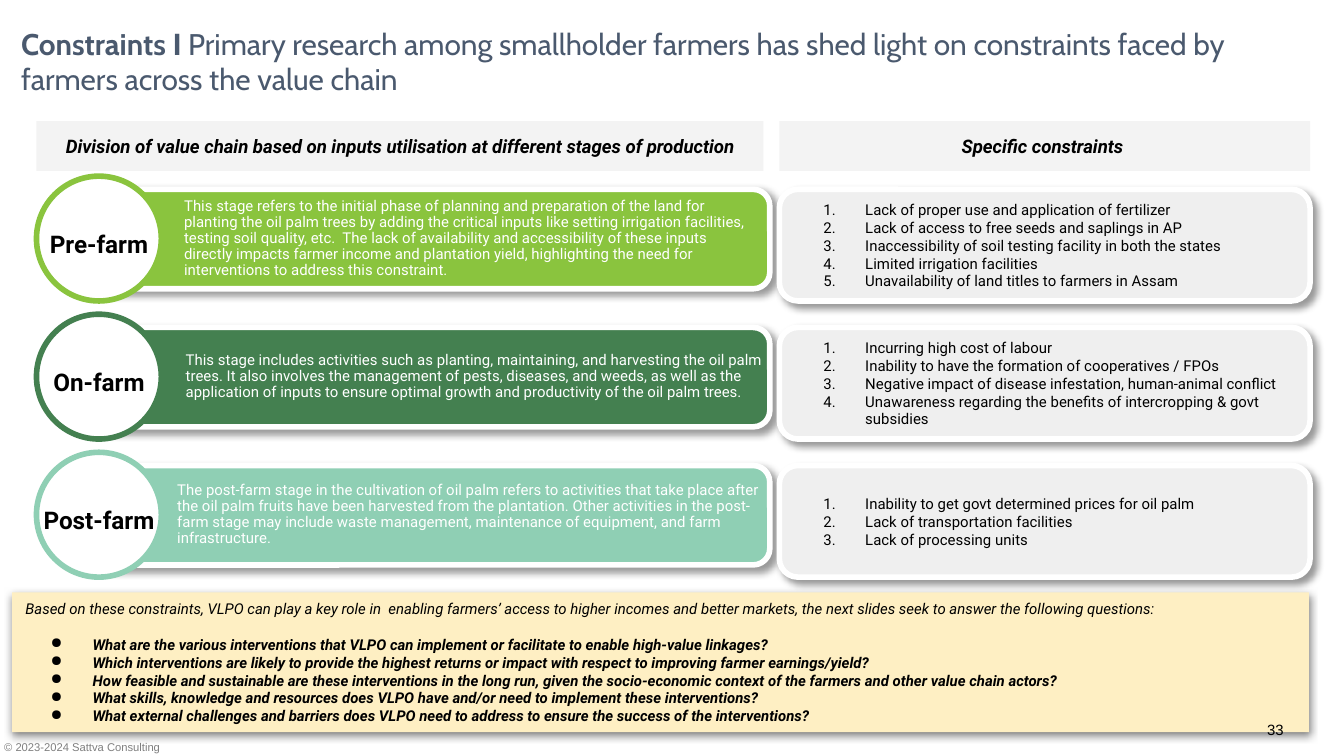
from lxml import etree
from pptx import Presentation
from pptx.dml.color import RGBColor
from pptx.enum.shapes import MSO_SHAPE
from pptx.enum.text import MSO_ANCHOR, PP_ALIGN
from pptx.oxml.ns import qn
from pptx.util import Cm, Pt

RECTANGLE = MSO_SHAPE.RECTANGLE
ROUNDED = MSO_SHAPE.ROUNDED_RECTANGLE
OVAL = MSO_SHAPE.OVAL
TOP, MIDDLE = MSO_ANCHOR.TOP, MSO_ANCHOR.MIDDLE
LEFT, CENTER, RIGHT, JUSTIFY = PP_ALIGN.LEFT, PP_ALIGN.CENTER, PP_ALIGN.RIGHT, PP_ALIGN.JUSTIFY

BLACK = RGBColor(0x00, 0x00, 0x00)
WHITE = RGBColor(0xFF, 0xFF, 0xFF)
SLATE = RGBColor(0x4A, 0x59, 0x6E)
GREY = RGBColor(0x7F, 0x7F, 0x7F)
HEADER_GREY = RGBColor(0xF3, 0xF3, 0xF3)
CARD_GREY = RGBColor(0xEF, 0xEF, 0xEF)
CREAM = RGBColor(0xFE, 0xEF, 0xC3)
LIME = RGBColor(0x8A, 0xC4, 0x3E)
FOREST = RGBColor(0x44, 0x80, 0x50)
MINT = RGBColor(0x8F, 0xCF, 0xB4)

STAGE_TOP, STAGE_PITCH = 3.58, 2.61
CONSTRAINT_LEFT, CONSTRAINT_WIDTH = 14.73, 10.03
CARD_SHADOW = (40, 4, 3, 45)
PANEL_SHADOW = (50, 4.5, 1.5, 90)

STAGES = [
    ("Pre-farm", LIME, 1.98, 12.42,
     "This stage refers to the initial phase of planning and preparation of the land for planting "
     "the oil palm trees by adding the critical inputs like setting irrigation facilities, testing "
     "soil quality, etc.  The lack of availability and accessibility of these inputs directly impacts "
     "farmer income and plantation yield, highlighting the need for interventions to address this "
     "constraint.",
     ["Lack of proper use and application of fertilizer",
      "Lack of access to free seeds and saplings in AP",
      "Inaccessibility of soil testing facility in both the states",
      "Limited irrigation facilities",
      "Unavailability of land titles to farmers in Assam"]),
    ("On-farm", FOREST, 2.01, 12.55,
     "This stage includes activities such as planting, maintaining, and harvesting the oil palm trees. "
     "It also involves the management of pests, diseases, and weeds, as well as the application of "
     "inputs to ensure optimal growth and productivity of the oil palm trees.",
     ["Incurring high cost of labour",
      "Inability to have the formation of cooperatives / FPOs",
      "Negative impact of disease infestation, human-animal conflict",
      "Unawareness regarding the benefits of intercropping & govt subsidies"]),
    ("Post-farm", MINT, 1.85, 12.7,
     "The post-farm stage in the cultivation of oil palm refers to activities that take place after "
     "the oil palm fruits have been harvested from the plantation. Other activities in the post-farm "
     "stage may include waste management, maintenance of equipment, and farm infrastructure.",
     ["Inability to get govt determined prices for oil palm",
      "Lack of transportation facilities",
      "Lack of processing units"]),
]

INTRODUCTION = (
    "Based on these constraints, VLPO can play a key role in  enabling farmers’ access to higher "
    "incomes and better markets, the next slides seek to answer the following questions: ")
QUESTIONS = [
    "What are the various interventions that VLPO can implement or facilitate to enable high-value linkages?",
    "Which interventions are likely to provide the highest returns or impact with respect to improving "
    "farmer earnings/yield?",
    "How feasible and sustainable are these interventions in the long run, given the socio-economic "
    "context of the farmers and other value chain actors?",
    "What skills, knowledge and resources does VLPO have and/or need to implement these interventions?",
    "What external challenges and barriers does VLPO need to address to ensure the success of the "
    "interventions? ",
]


def add_shadow(shape, opacity, blur, distance, angle):
    """Give a shape an outer black shadow."""
    effects = shape._element.spPr.find(qn("a:effectLst"))
    shadow = etree.SubElement(
        effects, qn("a:outerShdw"), blurRad=str(Pt(blur)), dist=str(Pt(distance)),
        dir=str(angle * 60000), algn="bl", rotWithShape="0")
    color = etree.SubElement(shadow, qn("a:srgbClr"), val=str(BLACK))
    etree.SubElement(color, qn("a:alpha"), val=str(opacity * 1000))


def add_box(slide, kind, left, top, width, height, fill, line=None, shadow=None):
    """Add a filled preset shape with an optional outline and shadow."""
    shape = slide.shapes.add_shape(kind, Cm(left), Cm(top), Cm(width), Cm(height))
    shape.shadow.inherit = False
    shape.fill.solid()
    shape.fill.fore_color.rgb = fill
    if line is None:
        shape.line.fill.background()
    else:
        shape.line.color.rgb = line
        shape.line.width = Pt(3)
    if shadow:
        add_shadow(shape, *shadow)
    return shape


def set_frame(shape, margins=(0.25, 0.25, 0.25, 0.25), anchor=MIDDLE):
    """Prepare the text frame of a shape and return it."""
    frame = shape.text_frame
    frame.word_wrap = True
    frame.vertical_anchor = anchor
    frame.margin_left, frame.margin_top, frame.margin_right, frame.margin_bottom = map(Cm, margins)
    return frame


def style_paragraph(paragraph, size, color=BLACK, align=LEFT, name="Roboto", bold=False, italic=False):
    """Set alignment and font of a paragraph."""
    paragraph.alignment = align
    font = paragraph.font
    font.size, font.name, font.bold, font.italic = Pt(size), name, bold, italic
    font.color.rgb = color


def add_marker(paragraph, tag, **attributes):
    """Indent a paragraph and give it a black bullet or number."""
    properties = paragraph._p.get_or_add_pPr()
    properties.set("marL", str(Cm(1.27)))
    properties.set("indent", str(Cm(-0.79)))
    color = etree.SubElement(properties, qn("a:buClr"))
    etree.SubElement(color, qn("a:srgbClr"), val=str(BLACK))
    etree.SubElement(properties, qn(tag), **attributes)


def add_text(slide, text, left, top, width, height, margins, anchor, size, **style):
    """Add a text box with one paragraph and return the paragraph."""
    box = slide.shapes.add_textbox(Cm(left), Cm(top), Cm(width), Cm(height))
    paragraph = set_frame(box, margins, anchor).paragraphs[0]
    paragraph.text = text
    style_paragraph(paragraph, size, **style)
    return paragraph


def add_title(slide):
    """Add the title with its bold lead."""
    paragraph = add_text(slide, "", 0.15, 0.23, 24.51, 2.36, (0.25,) * 4, TOP, 16,
                         color=SLATE, name="Cabin")
    for text, name, bold in (
            ("Constraints ", "Cabin", True), ("I", "Roboto", True),
            (" Primary research among smallholder farmers has shed light on constraints faced by "
             "farmers across the value chain", "Cabin", False)):
        run = paragraph.add_run()
        run.text = text
        run.font.name, run.font.bold = name, bold


def add_header(slide, text, left, width):
    """Add a column header."""
    shape = add_box(slide, RECTANGLE, left, 2.29, width, 0.94, HEADER_GREY)
    paragraph = set_frame(shape).paragraphs[0]
    paragraph.text = text
    style_paragraph(paragraph, 10, align=CENTER, bold=True, italic=True)


def add_constraints(slide, top, constraints):
    """Add a card with a numbered list."""
    card = add_box(slide, ROUNDED, CONSTRAINT_LEFT, top, CONSTRAINT_WIDTH, 2.11,
                   CARD_GREY, WHITE, CARD_SHADOW)
    frame = set_frame(card)
    for index, text in enumerate(constraints):
        paragraph = frame.add_paragraph() if index else frame.paragraphs[0]
        paragraph.text = text
        add_marker(paragraph, "a:buAutoNum", type="arabicPeriod")
        style_paragraph(paragraph, 8)


def add_stage(slide, top, name, color, text_left, text_width, description, constraints):
    """Add one row: bar, description, named circle and constraints."""
    add_box(slide, ROUNDED, 1.85, top, 12.7, 1.88, color, WHITE, CARD_SHADOW)
    paragraph = add_text(slide, description, text_left, top + 0.08, text_width, 1.7,
                         (1.5, 0.1, 0.1, 0.1), MIDDLE, 8, color=WHITE)
    paragraph.line_spacing = 0.9
    add_box(slide, OVAL, 0.69, top - 0.25, 2.36, 2.36, WHITE, color)
    add_text(slide, name, 0.57, top + 0.41, 2.6, 1.22, (0, 0.25, 0, 0.25), MIDDLE, 13,
             align=CENTER, bold=True)
    add_constraints(slide, top, constraints)


def add_questions(slide):
    """Add the panel with the introduction and bulleted questions."""
    panel = add_box(slide, RECTANGLE, 0.23, 11.2, 24.51, 2.64, CREAM, shadow=PANEL_SHADOW)
    frame = set_frame(panel)
    introduction = frame.paragraphs[0]
    introduction.text = INTRODUCTION
    introduction.space_after = Pt(9.4)
    style_paragraph(introduction, 8, align=JUSTIFY, italic=True)
    for question in QUESTIONS:
        paragraph = frame.add_paragraph()
        paragraph.text = question
        add_marker(paragraph, "a:buChar", char="●")
        style_paragraph(paragraph, 8, align=JUSTIFY, bold=True, italic=True)


def main():
    """Build the slide and save it."""
    presentation = Presentation()
    presentation.slide_width, presentation.slide_height = Cm(25.4), Cm(14.29)
    slide = presentation.slides.add_slide(presentation.slide_layouts[6])
    add_text(slide, "© 2023-2024 Sattva Consulting", -0.1, 13.89, 3.71, 0.46,
             (0.18, 0.1, 0.18, 0.1), TOP, 6, color=GREY, name="Arial")
    add_title(slide)
    add_header(slide, "Division of value chain based on inputs utilisation at different stages of production",
               0.69, 13.74)
    add_header(slide, "Specific constraints ", CONSTRAINT_LEFT, CONSTRAINT_WIDTH)
    add_questions(slide)
    for index, stage in enumerate(STAGES):
        add_stage(slide, STAGE_TOP + index * STAGE_PITCH, *stage)
    add_text(slide, "33", 22.89, 13.54, 1.52, 1.09, (0.15, 0.08, 0.15, 0.08), TOP, 8,
             align=RIGHT, name="Arial")
    presentation.save("out.pptx")


if __name__ == "__main__":
    main()
